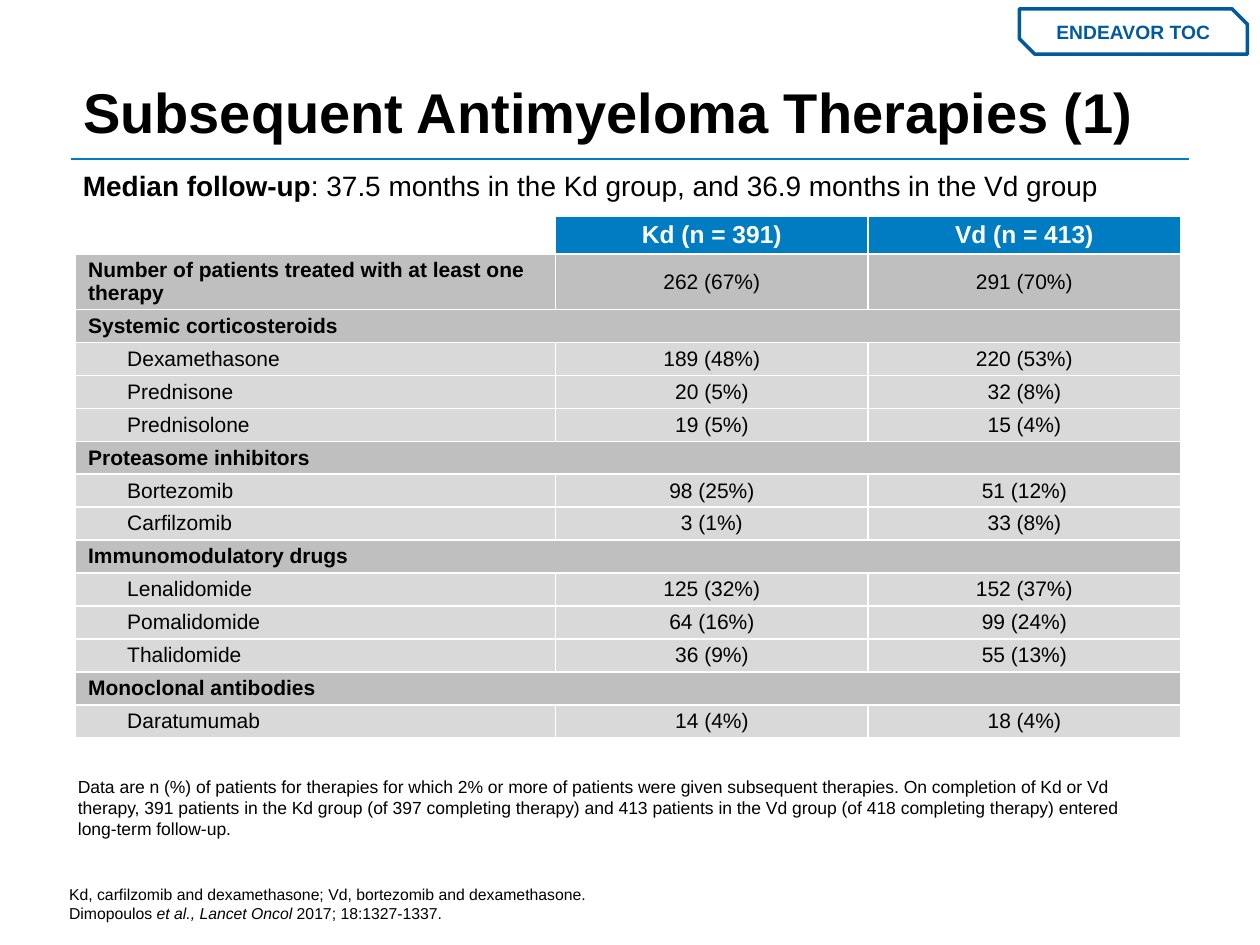
import lxml.etree
import pptx
import pptx.dml.color
import pptx.enum.shapes
import pptx.enum.text
import pptx.oxml.ns
import pptx.util

Inches, Pt = pptx.util.Inches, pptx.util.Pt
ALIGN, ANCHOR = pptx.enum.text.PP_ALIGN, pptx.enum.text.MSO_ANCHOR
FONT = "Arial"
BLACK, WHITE, BLUE, NAVY = "000000", "FFFFFF", "007CC2", "005A9F"
GROUP_GRAY, ROW_GRAY = "BFBFBF", "D9D9D9"

TITLE = "Subsequent Antimyeloma Therapies (1)"
TAG = "ENDEAVOR TOC"
# Each run is text plus an optional style: "b" bold, "i" italic
FOLLOW_UP = [[
    ("Median follow-up", "b"),
    (": 37.5 months in the Kd group, and 36.9 months in the Vd group", ""),
]]
TABLE_NOTE = [[(
    "Data are n (%) of patients for therapies for which 2% or more of patients were given "
    "subsequent therapies. On completion of Kd or Vd therapy, 391 patients in the Kd group "
    "(of 397 completing therapy) and 413 patients in the Vd group (of 418 completing therapy) "
    "entered long-term follow-up.", "")]]
REFERENCES = [
    [("Kd, carfilzomib and dexamethasone; Vd, bortezomib and dexamethasone.", "")],
    [("Dimopoulos ", ""), ("et al., Lancet Oncol", "i"), (" 2017; 18:1327-1337.", "")],
]

HEADER = ["", "Kd (n = 391)", "Vd (n = 413)"]
TOTAL = ["Number of patients treated with at least one therapy", "262 (67%)", "291 (70%)"]
THERAPIES = {
    "Systemic corticosteroids": [
        ["Dexamethasone", "189 (48%)", "220 (53%)"],
        ["Prednisone", "20 (5%)", "32 (8%)"],
        ["Prednisolone", "19 (5%)", "15 (4%)"],
    ],
    "Proteasome inhibitors": [
        ["Bortezomib", "98 (25%)", "51 (12%)"],
        ["Carfilzomib", "3 (1%)", "33 (8%)"],
    ],
    "Immunomodulatory drugs": [
        ["Lenalidomide", "125 (32%)", "152 (37%)"],
        ["Pomalidomide", "64 (16%)", "99 (24%)"],
        ["Thalidomide", "36 (9%)", "55 (13%)"],
    ],
    "Monoclonal antibodies": [["Daratumumab", "14 (4%)", "18 (4%)"]],
}
COLUMN_WIDTHS = [3.81, 2.48, 2.48]
TABLE_HEIGHT, HEADER_HEIGHT, TOTAL_HEIGHT = 4.13, 0.29, 0.44


def rgb(color):
    return pptx.dml.color.RGBColor.from_string(color)


def add_run(paragraph, text, size, color=BLACK, style=""):
    run = paragraph.add_run()
    run.text = text
    run.font.name, run.font.size = FONT, Pt(size)
    run.font.bold, run.font.italic = "b" in style, "i" in style
    run.font.color.rgb = rgb(color)


def add_text(slide, box, lines, size, anchor):
    """Add a wrapped text box whose lines share one paragraph."""
    frame = slide.shapes.add_textbox(*map(Inches, box)).text_frame
    frame.word_wrap, frame.vertical_anchor = True, anchor
    paragraph = frame.paragraphs[0]
    for index, runs in enumerate(lines):
        if index:
            paragraph.add_line_break()
        for text, style in runs:
            add_run(paragraph, text, size, style=style)
    return paragraph


def set_borders(cell, color, width):
    properties = cell._tc.get_or_add_tcPr()
    for index, side in enumerate(("a:lnL", "a:lnR", "a:lnT", "a:lnB")):
        line = lxml.etree.Element(pptx.oxml.ns.qn(side), w=str(Pt(width)))
        fill = lxml.etree.SubElement(line, pptx.oxml.ns.qn("a:solidFill"))
        lxml.etree.SubElement(fill, pptx.oxml.ns.qn("a:srgbClr"), val=color)
        properties.insert(index, line)


def fill_cell(cell, text, fill, size, color, style, centered, indent):
    cell.vertical_anchor = ANCHOR.MIDDLE
    cell.margin_left = cell.margin_right = Inches(0.1)
    cell.margin_top = cell.margin_bottom = Inches(0.03)
    if fill:
        cell.fill.solid()
        cell.fill.fore_color.rgb = rgb(fill)
    else:
        cell.fill.background()
    set_borders(cell, WHITE, 1)
    paragraph = cell.text_frame.paragraphs[0]
    if centered:
        paragraph.alignment = ALIGN.CENTER
    elif indent:
        paragraph._p.get_or_add_pPr().set("marL", str(Inches(indent)))
    if text:
        add_run(paragraph, text, size, color, style)
    else:
        paragraph.font.size = Pt(size)


def add_therapy_table(slide):
    rows = [("header", HEADER), ("total", TOTAL)]
    for group, drugs in THERAPIES.items():
        rows.append(("group", [group, "", ""]))
        rows.extend(("drug", drug) for drug in drugs)
    drug_height = (TABLE_HEIGHT - HEADER_HEIGHT - TOTAL_HEIGHT) / (len(rows) - 2)
    heights = {"header": HEADER_HEIGHT, "total": TOTAL_HEIGHT}
    fills = {"header": BLUE, "drug": ROW_GRAY}

    table = slide.shapes.add_table(
        len(rows), len(HEADER), Inches(0.6), Inches(1.72),
        Inches(sum(COLUMN_WIDTHS)), Inches(TABLE_HEIGHT)).table
    table.horz_banding = False
    for column, width in zip(table.columns, COLUMN_WIDTHS):
        column.width = Inches(width)
    for row_index, (kind, texts) in enumerate(rows):
        table.rows[row_index].height = Inches(heights.get(kind, drug_height))
        is_header = kind == "header"
        for column_index, text in enumerate(texts):
            is_label = column_index == 0
            fill_cell(
                table.cell(row_index, column_index), text,
                fill=None if is_header and is_label else fills.get(kind, GROUP_GRAY),
                size=14 if is_header else 12,
                color=WHITE if is_header else BLACK,
                style="b" if is_header or (is_label and kind != "drug") else "",
                centered=not is_label,
                indent=0.31 if kind == "drug" else 0)
        if kind == "group":
            table.cell(row_index, 0).merge(table.cell(row_index, len(texts) - 1))


def add_title(slide):
    line = slide.shapes.add_connector(
        pptx.enum.shapes.MSO_CONNECTOR.STRAIGHT,
        Inches(0.56), Inches(1.26), Inches(9.44), Inches(1.26))
    line.line.color.rgb, line.line.width = rgb(BLUE), Pt(1)
    lxml.etree.SubElement(line._element.spPr, pptx.oxml.ns.qn("a:effectLst"))

    title = slide.shapes.title
    title.left, title.top, title.width, title.height = map(Inches, (0.56, 0, 8.88, 1.21))
    frame = title.text_frame
    frame.vertical_anchor, frame.word_wrap = ANCHOR.BOTTOM, True
    frame.auto_size = pptx.enum.text.MSO_AUTO_SIZE.NONE
    paragraph = frame.paragraphs[0]
    paragraph.alignment, paragraph.line_spacing = ALIGN.LEFT, 0.9
    add_run(paragraph, TITLE, 32, style="b")


def add_tag(slide):
    tag = slide.shapes.add_shape(
        pptx.enum.shapes.MSO_SHAPE.SNIP_2_DIAG_RECTANGLE,
        *map(Inches, (8.09, 0.07, 1.81, 0.36)))
    tag.adjustments[0], tag.adjustments[1] = 0, 0.34
    tag.shadow.inherit = False
    tag.fill.background()
    tag.line.color.rgb, tag.line.width = rgb(NAVY), Pt(2)
    frame = tag.text_frame
    frame.word_wrap, frame.vertical_anchor = False, ANCHOR.MIDDLE
    frame.paragraphs[0].alignment = ALIGN.CENTER
    add_run(frame.paragraphs[0], TAG, 11, NAVY, "b")


def main():
    presentation = pptx.Presentation()
    presentation.slide_width, presentation.slide_height = Inches(10), Inches(7.5)
    slide = presentation.slides.add_slide(presentation.slide_layouts[5])
    add_title(slide)
    add_therapy_table(slide)
    add_text(slide, (0.52, 6.1, 8.77, 0.61), TABLE_NOTE, 10, ANCHOR.BOTTOM)
    add_text(slide, (0.45, 6.97, 6.89, 0.4), REFERENCES, 9, ANCHOR.BOTTOM)
    add_tag(slide)
    follow_up = add_text(slide, (0.56, 1.31, 8.88, 0.3), FOLLOW_UP, 16, ANCHOR.TOP)
    follow_up.line_spacing = 0.95
    presentation.save("out.pptx")


if __name__ == "__main__":
    main()
